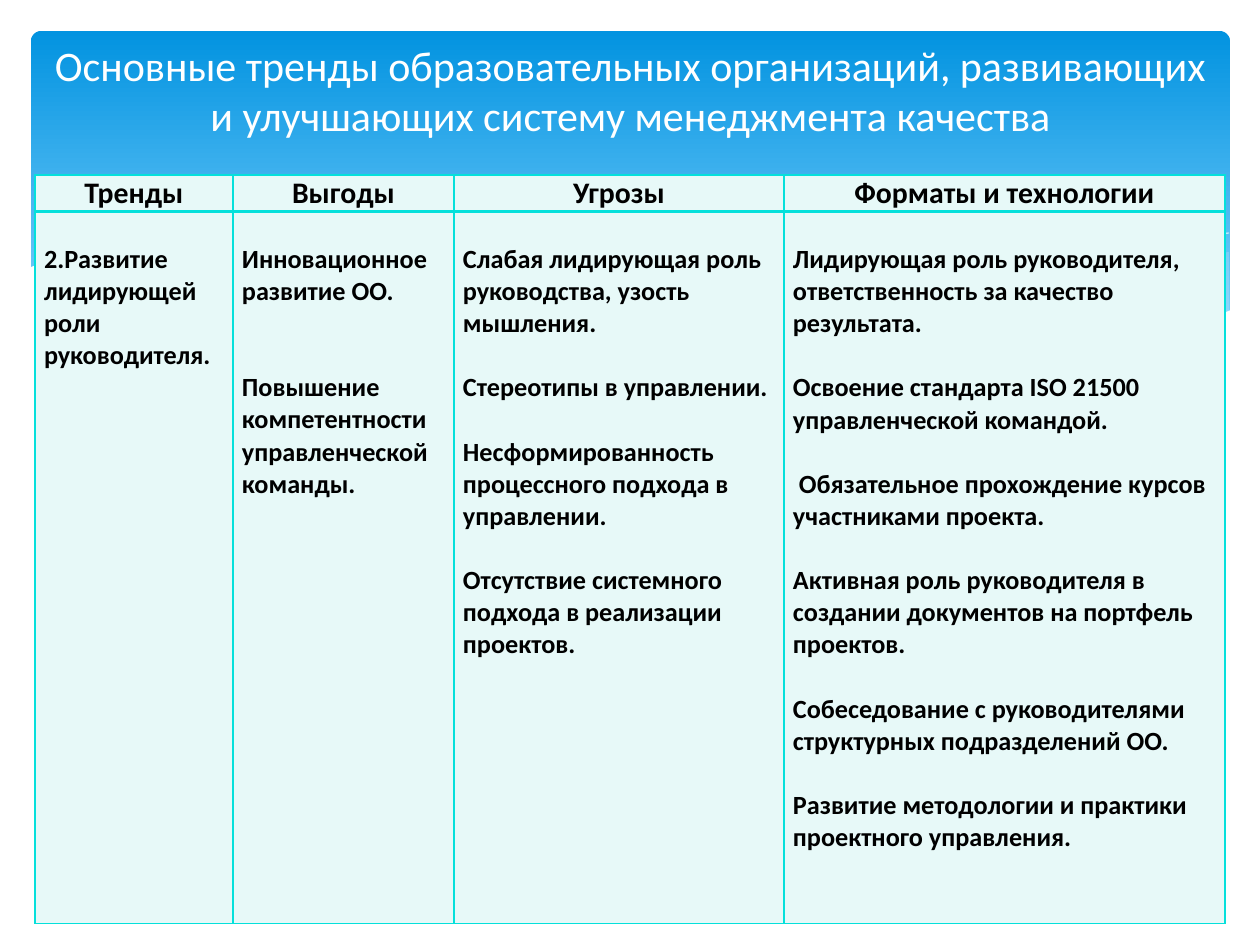
from lxml import etree
from pptx import Presentation
from pptx.dml.color import RGBColor
from pptx.enum.shapes import MSO_SHAPE
from pptx.enum.text import MSO_ANCHOR, PP_ALIGN
from pptx.oxml.ns import qn
from pptx.util import Pt

EMU_PER_PX = 914400 / 126
FONT = "Calibri"
CENTER, LEFT = PP_ALIGN.CENTER, PP_ALIGN.LEFT
MIDDLE = MSO_ANCHOR.MIDDLE
ROUNDED = MSO_SHAPE.ROUNDED_RECTANGLE
COLORS = {
    "white": "FFFFFF", "black": "000000", "band_top": "0293E0",
    "band_bottom": "83D3FE", "wave": "C6E7FC", "cell": "E7F9F8", "border": "05E0DB",
}
BODY_LINE = 18.3

TITLE = ("Основные тренды образовательных организаций, развивающих "
         "и улучшающих систему менеджмента качества")
COLUMNS = [
    ("Тренды", 198, 1, ["2.Развитие лидирующей роли руководителя."]),
    ("Выгоды", 221, 2, [
        "Инновационное развитие ОО.",
        "Повышение компетентности управленческой команды."]),
    ("Угрозы", 330, 1, [
        "Слабая лидирующая роль руководства, узость мышления.",
        "Стереотипы в управлении.",
        "Несформированность процессного подхода в управлении.",
        "Отсутствие системного подхода в реализации проектов."]),
    ("Форматы и технологии", 441, 1, [
        "Лидирующая роль руководителя, ответственность за качество результата.",
        "Освоение стандарта ISO 21500 управленческой командой.",
        " Обязательное прохождение курсов участниками проекта.",
        "Активная роль руководителя в создании документов на портфель проектов.",
        "Собеседование с руководителями структурных подразделений ОО.",
        "Развитие методологии и практики проектного управления."]),
]
RIGHT_WAVE = [
    (1229, 252), (1194, 257), (1142, 268), (1085, 281), (1014, 299), (949, 312),
    (889, 324), (833, 334), (871, 339), (922, 345), (969, 348), (1012, 350),
    (1052, 350), (1087, 348), (1120, 345), (1150, 339), (1178, 330), (1196, 324),
    (1229, 311)]
MIDDLE_WAVE = [
    (1125, 344), (1091, 341), (1017, 328), (934, 311), (842, 291), (793, 280),
    (736, 266), (682, 256), (632, 247), (586, 241), (529, 236), (479, 233),
    (433, 234), (394, 237), (360, 241), (407, 247), (456, 256), (509, 266),
    (566, 280), (619, 292), (713, 312), (779, 325), (838, 335), (893, 343),
    (942, 348), (989, 350), (1043, 350), (1091, 348)]
LONG_CURVE = [
    (389, 246), (422, 241), (471, 236), (524, 236), (591, 238), (672, 244),
    (766, 257), (876, 276), (958, 294), (1047, 316), (1143, 343)]
RIGHT_CURVE = [
    (772, 324), (823, 310), (876, 296), (942, 281), (1016, 265), (1091, 251),
    (1147, 242), (1198, 236), (1229, 233)]
WHITE_WAVE = [
    (1231, 310), (1208, 319), (1172, 330), (1133, 339), (1087, 345), (1037, 349),
    (980, 348), (915, 343), (842, 334), (760, 320), (667, 301), (563, 277),
    (493, 260), (428, 248), (368, 240), (315, 235), (266, 232), (223, 232),
    (184, 233), (150, 236), (120, 241), (96, 246), (74, 251), (58, 256),
    (45, 261), (29, 268), (29, 415), (1231, 415)]


def px(length):
    """Turn pixels into EMU."""
    return round(length * EMU_PER_PX)


def rgb(name):
    """Look up a named colour."""
    return RGBColor.from_string(COLORS[name])


def write_text(frame, paragraphs, size, color, bold=False, align=LEFT, gap=0):
    """Fill a text frame with paragraphs set apart by a gap in points."""
    frame.word_wrap = True
    for index, text in enumerate(paragraphs):
        paragraph = frame.paragraphs[0] if index == 0 else frame.add_paragraph()
        paragraph.alignment = align
        if index < len(paragraphs) - 1:
            paragraph.space_after = Pt(gap)
        run = paragraph.add_run()
        run.text = text
        run.font.name = FONT
        run.font.size = Pt(size)
        run.font.bold = bold
        run.font.color.rgb = rgb(color)


def add_band(slide):
    """Draw the rounded gradient band behind the heading."""
    band = slide.shapes.add_shape(ROUNDED, px(31), px(31), px(1199), px(340))
    band.adjustments[0] = 0.03
    band.shadow.inherit = False
    band.line.fill.background()
    band.fill.gradient()
    band.fill.gradient_angle = 270
    stops = zip(band.fill.gradient_stops, ("band_top", "band_bottom"), (0, 0.9))
    for stop, color, position in stops:
        stop.color.rgb = rgb(color)
        stop.position = position


def add_outline(slide, points, closed):
    """Build a freeform through the given pixel points."""
    builder = slide.shapes.build_freeform(*points[0], scale=EMU_PER_PX)
    builder.add_line_segments(points[1:], close=closed)
    outline = builder.convert_to_shape()
    outline.shadow.inherit = False
    return outline


def add_wave(slide, points, color, opacity=100):
    """Draw a filled wave with the given opacity in percent."""
    wave = add_outline(slide, points, True)
    wave.line.fill.background()
    wave.fill.solid()
    wave.fill.fore_color.rgb = rgb(color)
    if opacity < 100:
        tint = next(wave.element.spPr.iter(qn("a:srgbClr")))
        etree.SubElement(tint, qn("a:alpha"), val=str(opacity * 1000))


def add_curve(slide, points):
    """Draw a thin white open curve."""
    curve = add_outline(slide, points, False)
    curve.fill.background()
    curve.line.color.rgb = rgb("white")
    curve.line.width = Pt(0.5)


def style_cell(cell, top_margin, divider_side):
    """Set the fill, margins and borders of a cell, with one heavier side."""
    cell.margin_left = cell.margin_right = px(9)
    cell.margin_top, cell.margin_bottom = px(top_margin), 0
    properties = cell._tc.get_or_add_tcPr()
    for side in ("lnL", "lnR", "lnT", "lnB"):
        width = Pt(2 if side == divider_side else 1)
        border = etree.SubElement(properties, qn(f"a:{side}"), w=str(width))
        fill = etree.SubElement(border, qn("a:solidFill"))
        etree.SubElement(fill, qn("a:srgbClr"), val=COLORS["border"])
    cell.fill.solid()
    cell.fill.fore_color.rgb = rgb("cell")


def add_trends_table(slide):
    """Add the table of trends, benefits, threats and formats."""
    width = sum(column[1] for column in COLUMNS)
    table = slide.shapes.add_table(
        2, len(COLUMNS), px(35), px(175), px(width), px(748)).table
    table.rows[0].height, table.rows[1].height = px(36), px(712)
    for index, (heading, column_width, gap_lines, items) in enumerate(COLUMNS):
        table.columns[index].width = px(column_width)
        header, body = table.cell(0, index), table.cell(1, index)
        style_cell(header, 0, "lnB")
        style_cell(body, 32, "lnT")
        write_text(header.text_frame, [heading], 17, "black", bold=True, align=CENTER)
        write_text(body.text_frame, items, 15, "black", bold=True,
                   gap=gap_lines * BODY_LINE)


def add_title(slide):
    """Add the heading over the band."""
    frame = slide.shapes.add_textbox(px(35), px(26), px(1191), px(127)).text_frame
    frame.vertical_anchor = MIDDLE
    write_text(frame, [TITLE], 24, "white", align=CENTER)


def main():
    """Build and save the slide."""
    deck = Presentation()
    deck.slide_width, deck.slide_height = px(1260), px(945)
    slide = deck.slides.add_slide(deck.slide_layouts[6])
    add_band(slide)
    add_wave(slide, RIGHT_WAVE, "wave", 29)
    add_wave(slide, MIDDLE_WAVE, "wave", 40)
    add_curve(slide, LONG_CURVE)
    add_curve(slide, RIGHT_CURVE)
    add_wave(slide, WHITE_WAVE, "white")
    add_trends_table(slide)
    add_title(slide)
    deck.save("out.pptx")


if __name__ == "__main__":
    main()
